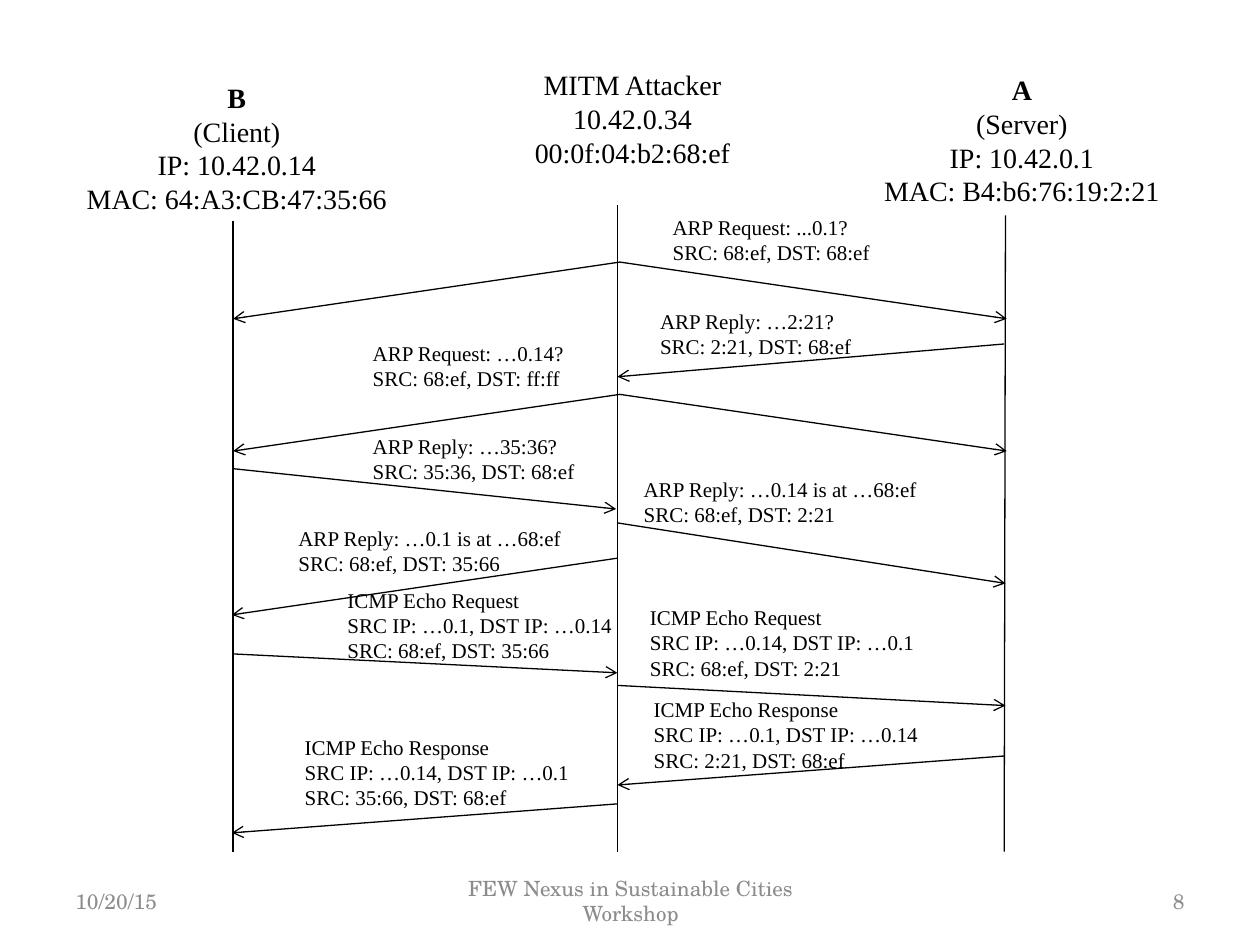
from dataclasses import dataclass

from lxml import etree
from pptx import Presentation
from pptx.dml.color import RGBColor
from pptx.enum.shapes import MSO_CONNECTOR
from pptx.enum.text import MSO_ANCHOR, MSO_AUTO_SIZE, PP_ALIGN
from pptx.oxml.ns import qn
from pptx.slide import Slide
from pptx.util import Pt

STRAIGHT = MSO_CONNECTOR.STRAIGHT
LEFT, CENTER, RIGHT = PP_ALIGN.LEFT, PP_ALIGN.CENTER, PP_ALIGN.RIGHT
TOP, MIDDLE = MSO_ANCHOR.TOP, MSO_ANCHOR.MIDDLE
GROW, FIXED = MSO_AUTO_SIZE.SHAPE_TO_FIT_TEXT, MSO_AUTO_SIZE.NONE
EMU_PER_PX = 9144


@dataclass(frozen=True)
class Theme:
    ink: RGBColor = RGBColor(0x00, 0x00, 0x00)
    muted: RGBColor = RGBColor(0x8C, 0x8C, 0x8C)
    diagram_font: str = "Times New Roman"
    footer_font: str = "TeX Gyre Schola"
    host_size: int = 16
    small_size: int = 12
    line_width: float = 0.75


@dataclass(frozen=True)
class Host:
    left: int
    top: int
    width: int
    height: int
    lines: tuple[str, ...]
    bold_first: bool


@dataclass(frozen=True)
class Line:
    x1: int
    y1: int
    x2: int
    y2: int


@dataclass(frozen=True)
class Label:
    left: int
    top: int
    width: int
    lines: tuple[str, ...]


@dataclass(frozen=True)
class Footer:
    left: int
    width: int
    text: str
    align: PP_ALIGN


THEME = Theme()
CLIENT, ATTACKER, SERVER = 185, 490, 798
LABEL_HEIGHTS = {2: 50, 3: 71}

LIFELINES = (
    Line(CLIENT, 175, CLIENT, 676),
    Line(ATTACKER, 163, ATTACKER, 676),
    Line(SERVER, 171, SERVER - 1, 676),
)

BROADCASTS = tuple(
    Line(ATTACKER + 2, y, x, y + 45)
    for y in (208, 313)
    for x in (CLIENT, SERVER + 1)
)

MESSAGES = (
    Line(SERVER - 1, 273, ATTACKER, 299),
    Line(CLIENT, 372, ATTACKER - 1, 404),
    Line(ATTACKER, 415, SERVER, 463),
    Line(ATTACKER, 443, CLIENT - 1, 488),
    Line(CLIENT, 519, ATTACKER, 534),
    Line(ATTACKER, 544, SERVER, 560),
    Line(SERVER - 1, 600, ATTACKER, 623),
    Line(ATTACKER, 638, CLIENT - 1, 661),
)

HOSTS = (
    Host(48, 59, 280, 118, ("B", "(Client)", "IP: 10.42.0.14", "MAC: 64:A3:CB:47:35:66"), True),
    Host(376, 49, 252, 91, ("MITM Attacker", "10.42.0.34", "00:0f:04:b2:68:ef"), False),
    Host(685, 53, 252, 118, ("A", "(Server)", "IP: 10.42.0.1", "MAC: B4:b6:76:19:2:21"), True),
)

LABELS = (
    Label(524, 165, 207, ("ARP Request: ...0.1?", "SRC: 68:ef, DST: 68:ef")),
    Label(514, 240, 207, ("ARP Reply: …2:21?", "SRC: 2:21, DST: 68:ef")),
    Label(286, 265, 194, ("ARP Request: …0.14?", "SRC: 68:ef, DST: ff:ff")),
    Label(286, 339, 207, ("ARP Reply: …35:36?", "SRC: 35:36, DST: 68:ef")),
    Label(501, 373, 285, ("ARP Reply: …0.14 is at …68:ef", "SRC: 68:ef, DST: 2:21")),
    Label(227, 412, 263, ("ARP Reply: …0.1 is at …68:ef", "SRC: 68:ef, DST: 35:66")),
    Label(232, 578, 250, ("ICMP Echo Response", "SRC IP: …0.14, DST IP: …0.1", "SRC: 35:66, DST: 68:ef")),
    Label(266, 461, 250, ("ICMP Echo Request", "SRC IP: …0.1, DST IP: …0.14", "SRC: 68:ef, DST: 35:66")),
    Label(509, 548, 250, ("ICMP Echo Response", "SRC IP: …0.1, DST IP: …0.14", "SRC: 2:21, DST: 68:ef")),
    Label(506, 475, 250, ("ICMP Echo Request", "SRC IP: …0.14, DST IP: …0.1", "SRC: 68:ef, DST: 2:21")),
)

FOOTERS = (
    Footer(342, 317, "FEW Nexus in Sustainable Cities Workshop", CENTER),
    Footer(50, 233, "10/20/15", LEFT),
    Footer(717, 233, "8", RIGHT),
)


def px(value: int) -> int:
    return value * EMU_PER_PX


def add_line(page: Slide, line: Line, arrow: bool = False) -> None:
    connector = page.shapes.add_connector(
        STRAIGHT, px(line.x1), px(line.y1), px(line.x2), px(line.y2)
    )
    connector.line.color.rgb = THEME.ink
    connector.line.width = Pt(THEME.line_width)
    properties = connector.element.spPr
    if arrow:
        outline = properties.find(qn("a:ln"))
        etree.SubElement(outline, qn("a:tailEnd"), type="arrow")
    etree.SubElement(properties, qn("a:effectLst"))


def add_text(
    page: Slide,
    left: int,
    top: int,
    width: int,
    height: int,
    lines: tuple[str, ...],
    *,
    size: int = THEME.small_size,
    font: str = THEME.diagram_font,
    color: RGBColor = THEME.ink,
    align: PP_ALIGN = LEFT,
    anchor: MSO_ANCHOR = TOP,
    auto_size: MSO_AUTO_SIZE = GROW,
    bold_first: bool = False,
) -> None:
    box = page.shapes.add_textbox(px(left), px(top), px(width), px(height))
    frame = box.text_frame
    frame.word_wrap = True
    frame.auto_size = auto_size
    frame.vertical_anchor = anchor
    for index, text in enumerate(lines):
        para = frame.add_paragraph() if index else frame.paragraphs[0]
        para.alignment = align
        span = para.add_run()
        span.text = text
        span.font.name = font
        span.font.size = Pt(size)
        span.font.color.rgb = color
        span.font.bold = bold_first and index == 0


def main() -> None:
    deck = Presentation()
    deck.slide_width, deck.slide_height = px(1000), px(750)
    page = deck.slides.add_slide(deck.slide_layouts.get_by_name("Blank"))
    for lifeline in LIFELINES:
        add_line(page, lifeline)
    for message in BROADCASTS + MESSAGES:
        add_line(page, message, arrow=True)
    for host in HOSTS:
        add_text(page, host.left, host.top, host.width, host.height, host.lines,
                 size=THEME.host_size, align=CENTER, bold_first=host.bold_first)
    for label in LABELS:
        add_text(page, label.left, label.top, label.width,
                 LABEL_HEIGHTS[len(label.lines)], label.lines)
    for footer in FOOTERS:
        add_text(page, footer.left, 695, footer.width, 40, (footer.text,),
                 font=THEME.footer_font, color=THEME.muted, align=footer.align,
                 anchor=MIDDLE, auto_size=FIXED)
    deck.save("out.pptx")


if __name__ == "__main__":
    main()
